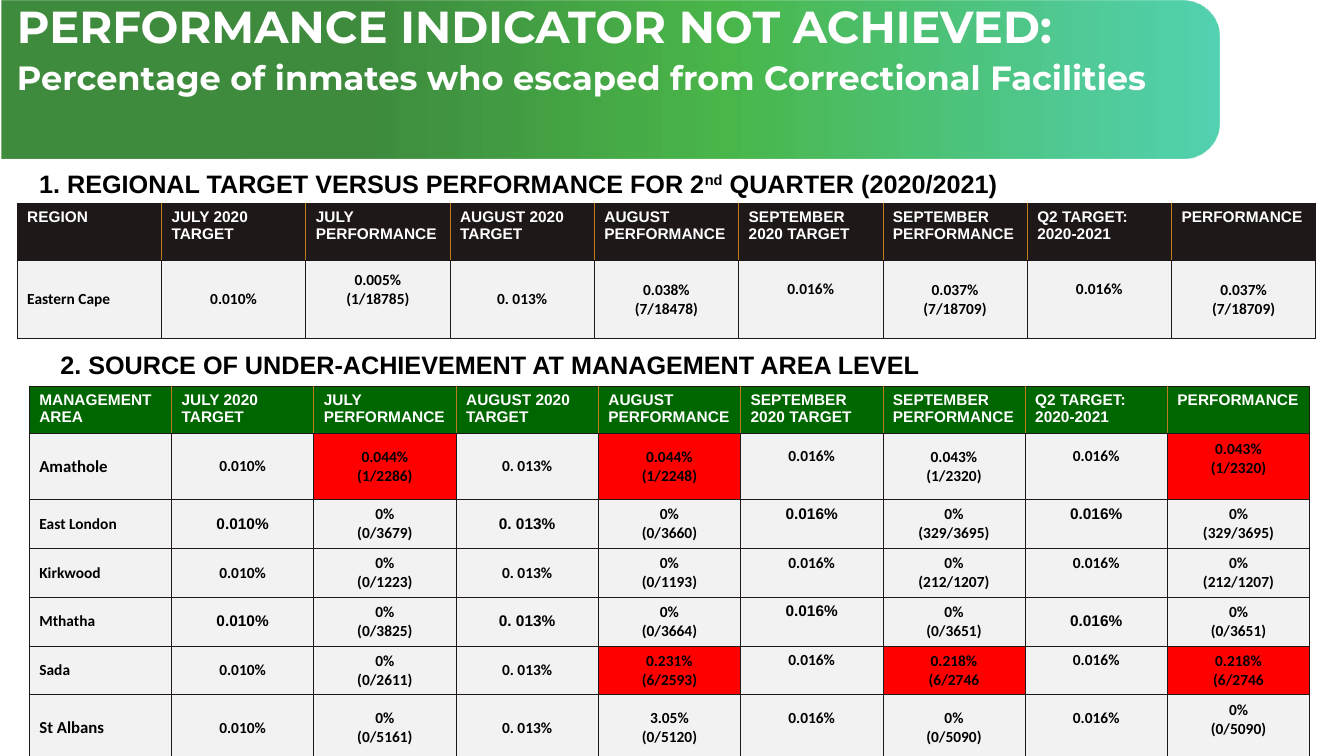
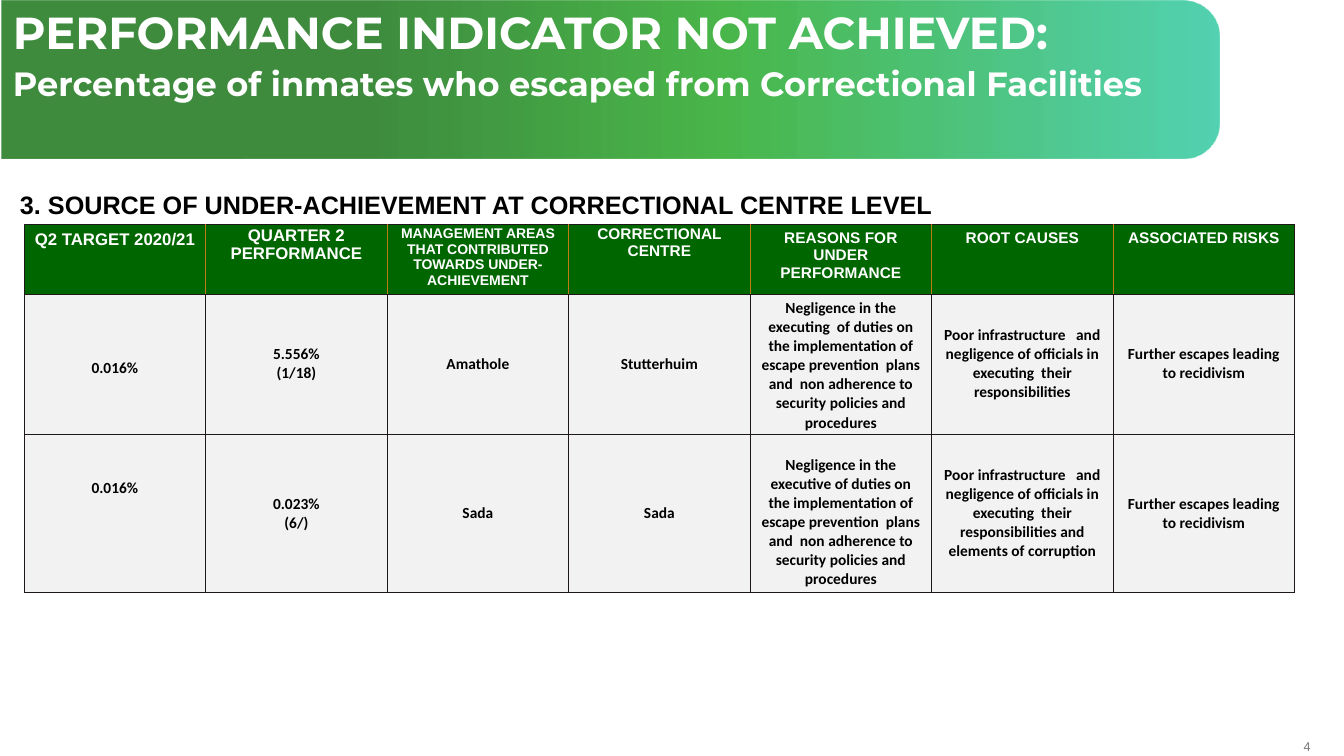
from collections import defaultdict

from pptx import Presentation
from pptx.dml.color import RGBColor
from pptx.enum.shapes import MSO_SHAPE
from pptx.enum.text import MSO_ANCHOR, PP_ALIGN
from pptx.oxml import parse_xml
from pptx.oxml.ns import nsdecls
from pptx.util import Inches, Pt

COLORS = {
    "ink": "1E1918", "rule": "BF7B17", "green": "006600", "mid": "009900",
    "teal": "00BC8D", "cell": "F2F2F2", "alert": "FF0000",
    "white": "FFFFFF", "black": "000000", "gray": "77787B",
}
BANNER_STOPS = [(30, "green", 75), (59, "mid", 71), (100, "teal", 67)]
TITLE = [("PERFORMANCE INDICATOR NOT ACHIEVED:", 32),
         ("Percentage of inmates who escaped from Correctional Facilities", 24)]

MONTH_HEADS = ["JULY 2020\nTARGET", "JULY PERFORMANCE", "AUGUST 2020\nTARGET",
               "AUGUST PERFORMANCE", "SEPTEMBER 2020 TARGET",
               "SEPTEMBER PERFORMANCE", "Q2 TARGET: 2020-2021", "PERFORMANCE"]
TARGETS = ["0.010%", "0. 013%", "0.016%", "0.016%"]
REGION = ("Eastern Cape", "0.005%\n(1/18785)", "0.038%\n(7/18478)",
          "0.037%\n(7/18709)", "0.037%\n(7/18709)")
AREAS = [
    ("Amathole", "0.044%\n(1/2286)", "0.044%\n(1/2248)", "0.043%\n(1/2320)", "0.043%\n(1/2320)"),
    ("East London", "0%\n(0/3679)", "0%\n(0/3660)", "0%\n(329/3695)", "0%\n(329/3695)"),
    ("Kirkwood", "0%\n(0/1223)", "0%\n(0/1193)", "0%\n(212/1207)", "0%\n(212/1207)"),
    ("Mthatha", "0%\n(0/3825)", "0%\n(0/3664)", "0%\n(0/3651)", "0%\n(0/3651)"),
    ("Sada", "0%\n(0/2611)", "0.231%\n(6/2593)", "0.218%\n(6/2746", "0.218%\n(6/2746"),
    ("St Albans", "0%\n(0/5161)", "3.05%\n(0/5120)", "0%\n(0/5090)", "0%\n(0/5090)"),
]
CENTRE_HEADS = [
    "Q2 TARGET 2020/21", "QUARTER 2\nPERFORMANCE",
    "MANAGEMENT AREAS THAT CONTRIBUTED TOWARDS UNDER-ACHIEVEMENT",
    "CORRECTIONAL CENTRE", "REASONS FOR UNDER\nPERFORMANCE", "ROOT CAUSES",
    "ASSOCIATED RISKS",
]
REASON = ("Negligence in the {} of duties on the implementation of escape prevention  "
          "plans and  non adherence to security policies and procedures")
CAUSE = ("Poor infrastructure   and negligence of officials in executing  "
         "their responsibilities")
RISK = "Further escapes leading to recidivism"
CENTRES = [
    ["0.016%", "5.556%\n(1/18)", "Amathole", "Stutterhuim",
     REASON.format("executing "), CAUSE, RISK],
    ["0.016%", "0.023%\n(6/)", "Sada", "Sada",
     REASON.format("executive"), CAUSE + " and elements of corruption", RISK],
]


def rgb(name):
    return RGBColor.from_string(COLORS[name])


def add_run(p, text, size, color="black", font="Arial", bold=True):
    r = p.add_run()
    r.text = text
    r.font.size, r.font.name, r.font.bold = Pt(size), font, bold
    r.font.color.rgb = rgb(color)
    return r


def add_text_box(s, x, y, w, h):
    tf = s.shapes.add_textbox(Inches(x), Inches(y), Inches(w), Inches(h)).text_frame
    tf.word_wrap = True
    return tf


def add_banner(s):
    """Gradient band with rounded right corners: an upright tab turned by 90 degrees."""
    sp = s.shapes.add_shape(MSO_SHAPE.ROUND_2_SAME_RECTANGLE, Inches(5.27),
                            Inches(-5.25), Inches(1.57), Inches(12.08))
    sp.rotation = 90
    sp.adjustments[0], sp.adjustments[1] = 0.233, 0
    sp.shadow.inherit = False
    sp.line.fill.background()
    stops = "".join(
        f'<a:gs pos="{pos * 1000}"><a:srgbClr val="{COLORS[color]}">'
        f'<a:alpha val="{alpha * 1000}"/></a:srgbClr></a:gs>'
        for pos, color, alpha in BANNER_STOPS)
    sp._element.spPr.find("{*}prstGeom").addnext(parse_xml(
        f'<a:gradFill {nsdecls("a")} rotWithShape="1"><a:gsLst>{stops}</a:gsLst>'
        '<a:lin ang="16200000" scaled="0"/></a:gradFill>'))


def add_title(s, x, y):
    tf = add_text_box(s, x, y, 11.98, 0.57)
    for i, (text, size) in enumerate(TITLE):
        p = tf.add_paragraph() if i else tf.paragraphs[0]
        p.line_spacing, p.space_after = 0.9, Pt(6)
        add_run(p, text, size, "white", "Montserrat")


def add_heading(s, x, y, *parts):
    """Section heading; every second part is superscript."""
    p = add_text_box(s, x, y, 10, 0.4).paragraphs[0]
    for i, text in enumerate(parts):
        r = add_run(p, text, 18)
        if i % 2:
            r._r.get_or_add_rPr().set("baseline", "30000")


def add_page_number(s, number):
    tf = add_text_box(s, 12.61, 7.33, 0.39, 0.15)
    tf.margin_left = tf.margin_right = tf.margin_top = tf.margin_bottom = 0
    tf.vertical_anchor = MSO_ANCHOR.MIDDLE
    p = tf.paragraphs[0]
    p.alignment = PP_ALIGN.RIGHT
    add_run(p, str(number), 9, "gray", bold=False)


def set_borders(cell, left, right):
    tcPr = cell._tc.get_or_add_tcPr()
    sides = {"L": left, "R": right, "T": "ink", "B": "ink"}
    for i, (side, color) in enumerate(sides.items()):
        tcPr.insert(i, parse_xml(
            f'<a:ln{side} {nsdecls("a")} w="6350"><a:solidFill>'
            f'<a:srgbClr val="{COLORS[color]}"/></a:solidFill></a:ln{side}>'))


def fill_cell(cell, text, fill, color, font, size, align, anchor, inset=(0.1, 0.05), shift=0):
    """Style and fill a cell; shift moves middle-anchored text down (or up if negative)."""
    cell.fill.solid()
    cell.fill.fore_color.rgb = rgb(fill)
    cell.vertical_anchor = anchor
    cell.margin_left = cell.margin_right = Inches(inset[0])
    cell.margin_top = Inches(inset[1] + 2 * max(shift, 0))
    cell.margin_bottom = Inches(inset[1] + 2 * max(-shift, 0))
    tf = cell.text_frame
    for i, line in enumerate(text.split("\n")):
        p = tf.add_paragraph() if i else tf.paragraphs[0]
        p.alignment = align
        add_run(p, line, size, color, font)


def add_grid(s, x, y, width, heights, rows, head_fill, special, left_cols=(), head_align=PP_ALIGN.LEFT):
    """Table with a header row; special maps (row, column) to cell settings."""
    cols = len(rows[0])
    table = s.shapes.add_table(len(rows), cols, Inches(x), Inches(y),
                               Inches(width), Inches(sum(heights))).table
    table.first_row = table.horz_banding = False
    for col in table.columns:
        col.width = Inches(width / cols)
    for i, row in enumerate(rows):
        table.rows[i].height = Inches(heights[i])
        for j, text in enumerate(row):
            cell = table.cell(i, j)
            if i == 0:
                style = dict(fill=head_fill, color="white", font="Arial", size=11,
                             align=head_align, anchor=MSO_ANCHOR.TOP)
                set_borders(cell, "rule" if j else "ink", "rule" if j < cols - 1 else "ink")
            else:
                style = dict(fill="cell", color="black", font="Calibri", size=11,
                             align=PP_ALIGN.LEFT if j in left_cols else PP_ALIGN.CENTER,
                             anchor=MSO_ANCHOR.MIDDLE)
                set_borders(cell, "ink", "ink")
            fill_cell(cell, text, **{**style, **special.get((i, j), {})})


def monthly_row(name, *results):
    """Name followed by alternating target and performance."""
    return [name] + [v for pair in zip(TARGETS, results) for v in pair]


def area_special():
    special = defaultdict(dict)
    for i in range(1, len(AREAS) + 1):
        for j in (5, 7):
            special[i, j]["shift"] = -0.1
    special[4, 7]["shift"] = 0
    for i in (1, 6):
        special[i, 0]["size"] = 12
        special[i, 8]["shift"] = -0.08
    for i in (2, 4):
        for j in (1, 3, 5, 7):
            special[i, j]["font"] = "Arial"
    for key in [(1, 2), (1, 4), (1, 8), (5, 4), (5, 6), (5, 8)]:
        special[key]["fill"] = "alert"
    return special


def add_slide(prs):
    s = prs.slides.add_slide(prs.slide_layouts[6])
    add_banner(s)
    return s


def build_area_slide(prs):
    s = add_slide(prs)
    add_title(s, 0.07, 0)
    add_heading(s, 0.29, 1.62, "1. REGIONAL TARGET VERSUS PERFORMANCE FOR 2", "nd",
                " QUARTER (2020/2021)")
    add_heading(s, 0.5, 3.42, "2. SOURCE OF UNDER-ACHIEVEMENT AT MANAGEMENT AREA LEVEL")
    add_grid(s, 0.17, 2.02, 12.88, [0.56, 0.78],
             [["REGION"] + MONTH_HEADS, monthly_row(*REGION)], "ink",
             {(1, j): {"shift": -0.1} for j in (2, 5, 7)}, left_cols=(0,))
    add_grid(s, 0.29, 3.83, 12.7, [0.46, 0.66] + [0.47] * 4 + [0.66],
             [["MANAGEMENT AREA"] + MONTH_HEADS] + [monthly_row(*a) for a in AREAS],
             "green", area_special(), left_cols=(0,))


def build_centre_slide(prs):
    s = add_slide(prs)
    add_title(s, 0.03, 0.06)
    add_heading(s, 0.1, 1.83, "3. SOURCE OF UNDER-ACHIEVEMENT AT CORRECTIONAL CENTRE LEVEL")
    tight = (0.01, 0.01)
    special = {
        (0, 0): {"size": 12},
        (0, 1): {"size": 12, "inset": tight},
        (0, 2): {"size": 10, "inset": tight},
        (0, 3): {"inset": tight},
        (1, 0): {"shift": 0.04},
        (2, 0): {"shift": -0.25},
        (2, 4): {"shift": 0.08},
    }
    add_grid(s, 0.24, 2.23, 12.6, [0.68, 1.39, 1.57], [CENTRE_HEADS] + CENTRES,
             "green", special, head_align=PP_ALIGN.CENTER)
    add_page_number(s, 4)


def main():
    prs = Presentation()
    prs.slide_width, prs.slide_height = Inches(13.33), Inches(7.5)
    build_area_slide(prs)
    build_centre_slide(prs)
    prs.save("out.pptx")


if __name__ == "__main__":
    main()
